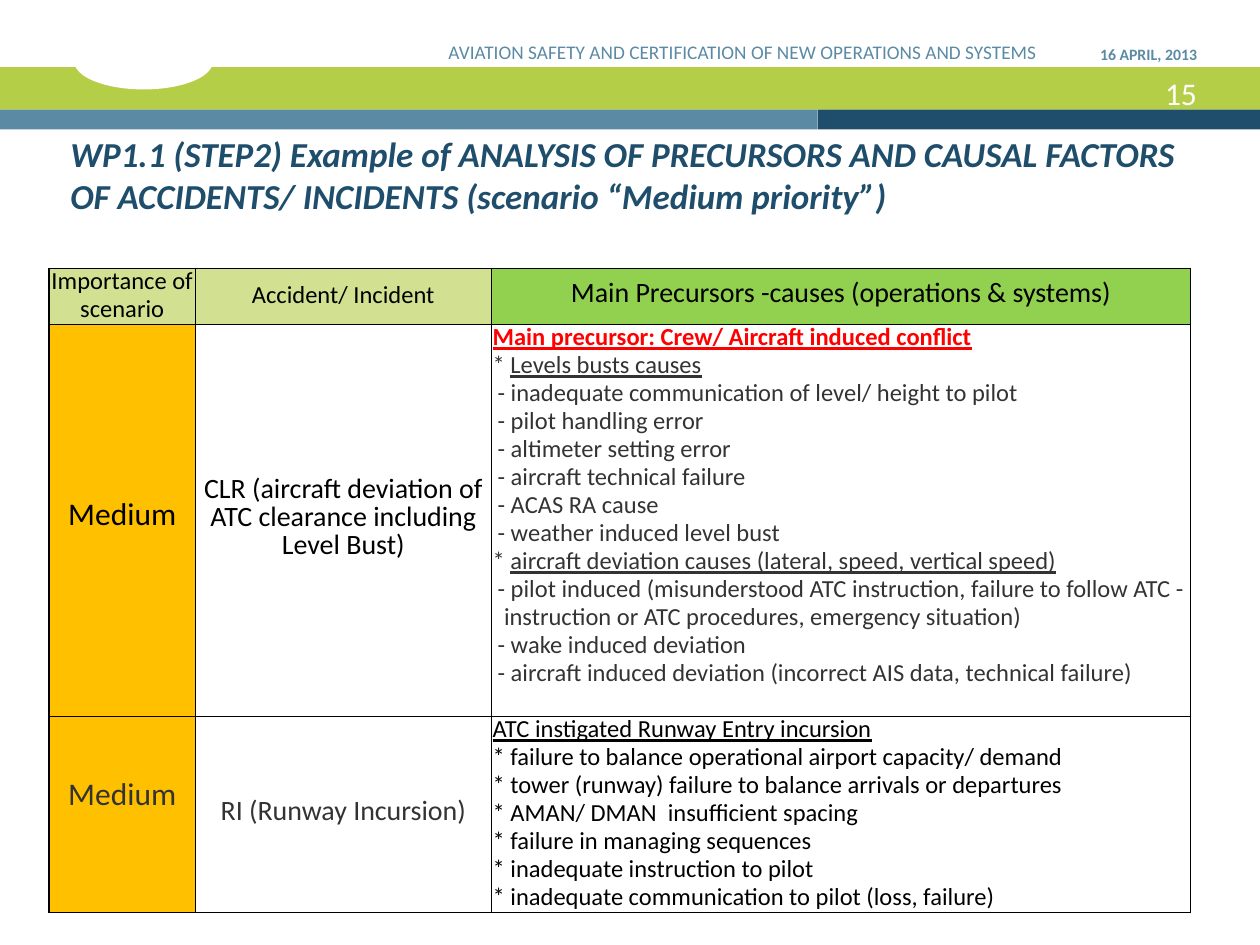
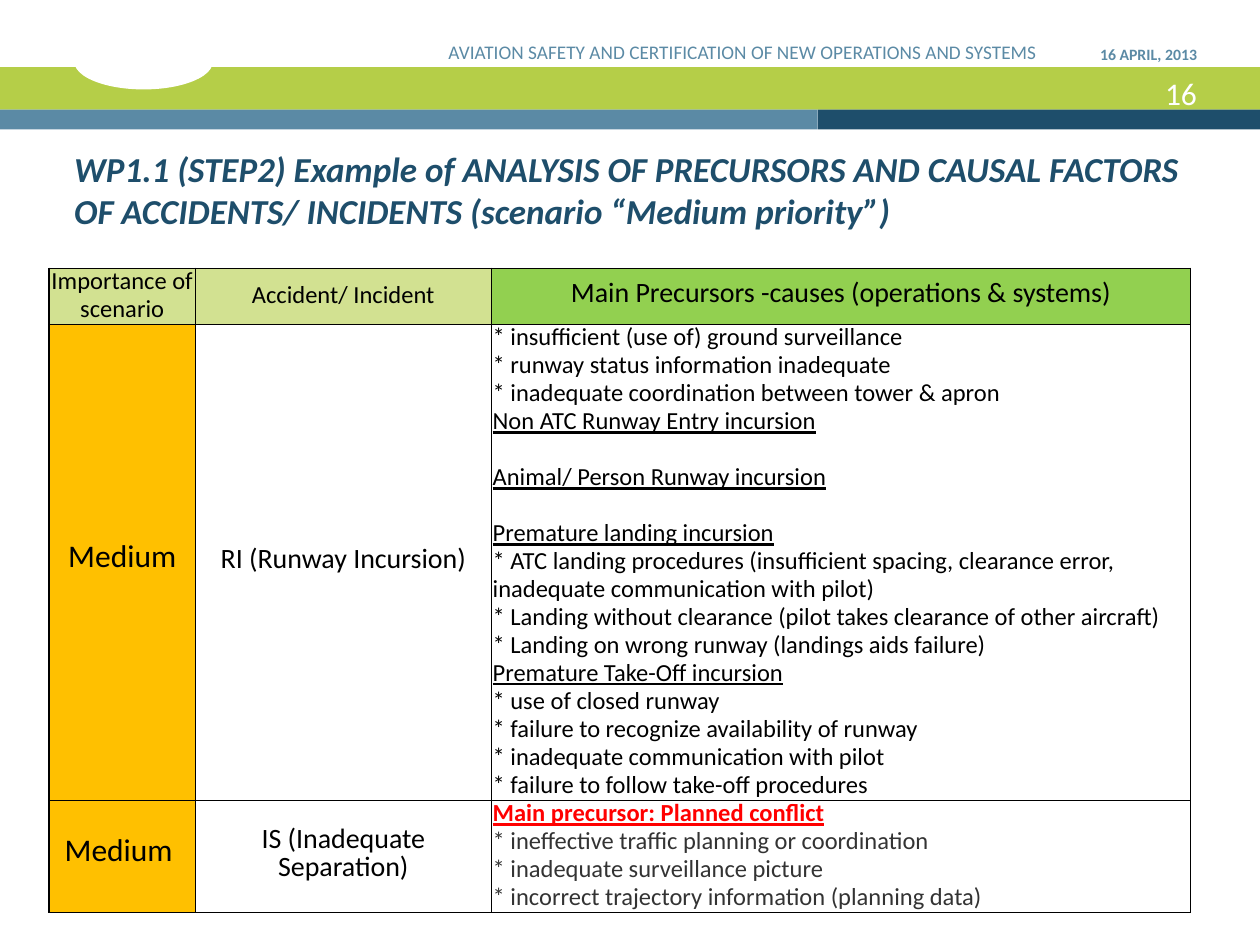
import dataclasses

import pptx
import pptx.dml.color
import pptx.enum.shapes
import pptx.enum.text
import pptx.oxml
import pptx.oxml.ns
import pptx.util

Pt = pptx.util.Pt
Inches = pptx.util.Inches
Align = pptx.enum.text.PP_ALIGN
Anchor = pptx.enum.text.MSO_ANCHOR
Shape = pptx.enum.shapes.MSO_SHAPE


@dataclasses.dataclass(frozen=True)
class Theme:
    font: str = "Calibri"
    navy: str = "1E4E6B"
    steel: str = "5B8AA5"
    lime: str = "B5CE48"
    pale: str = "D2E191"
    green: str = "92D050"
    amber: str = "FFC000"
    white: str = "FFFFFF"
    black: str = "000000"
    gray: str = "333333"
    red: str = "FF0000"
    title: int = 20
    large: int = 18
    medium: int = 16
    body: int = 14
    event: int = 11
    date: int = 9
    line: int = 16


LOOK = Theme()
WIDTH, HEIGHT = Inches(10), Inches(7.5)
COLUMNS = (11.6, 23.5, 55.5)
EVENT = "AVIATION SAFETY AND CERTIFICATION OF NEW OPERATIONS AND SYSTEMS"
TITLE = ("WP1.1 (STEP2) Example of ANALYSIS OF PRECURSORS AND CAUSAL FACTORS "
         "OF ACCIDENTS/ INCIDENTS (scenario “Medium priority”)")
HEADS = (("Importance of scenario", LOOK.body, LOOK.pale),
         ("Accident/ Incident", LOOK.body, LOOK.pale),
         ("Main Precursors -causes (operations & systems)", LOOK.medium, LOOK.green))


@dataclasses.dataclass
class Case:
    """One table row; lines is its height in text lines."""
    level: str
    event: str
    causes: list
    lines: int
    ink: str
    tint: str = LOOK.black
    lift: int = 0


# Causes are (kind, text): main, head, gap (head after a gap), sub, star, dash.
DEVIATION = [
    ("main", "Main precursor: Crew/ Aircraft induced conflict"),
    ("sub", "Levels busts causes"),
    ("dash", "inadequate communication of level/ height to pilot"),
    ("dash", "pilot handling error"),
    ("dash", "altimeter setting error"),
    ("dash", "aircraft technical failure"),
    ("dash", "ACAS RA cause"),
    ("dash", "weather induced level bust"),
    ("sub", "aircraft deviation causes (lateral, speed, vertical speed)"),
    ("dash", "pilot induced (misunderstood ATC instruction, failure to follow "
             "ATC - instruction or ATC procedures, emergency situation)"),
    ("dash", "wake induced deviation"),
    ("dash", "aircraft induced deviation (incorrect AIS data, technical failure)"),
]
ENTRY = [
    ("head", "ATC instigated Runway Entry incursion"),
    ("star", "failure to balance operational airport capacity/ demand"),
    ("star", "tower (runway) failure to balance arrivals or departures"),
    ("star", "AMAN/ DMAN  insufficient spacing"),
    ("star", "failure in managing sequences"),
    ("star", "inadequate instruction to pilot"),
    ("star", "inadequate communication to pilot (loss, failure)"),
]
RUNWAY = [
    ("star", "insufficient (use of) ground surveillance"),
    ("star", "runway status information inadequate"),
    ("star", "inadequate coordination between tower & apron"),
    ("head", "Non ATC Runway Entry incursion"),
    ("gap", "Animal/ Person Runway incursion"),
    ("gap", "Premature landing incursion"),
    ("star", "ATC landing procedures (insufficient spacing, clearance error, "
             "inadequate communication with pilot)"),
    ("star", "Landing without clearance (pilot takes clearance of other aircraft)"),
    ("star", "Landing on wrong runway (landings aids failure)"),
    ("head", "Premature Take-Off incursion"),
    ("star", "use of closed runway"),
    ("star", "failure to recognize availability of runway"),
    ("star", "inadequate communication with pilot"),
    ("star", "failure to follow take-off procedures"),
]
PLANNED = [
    ("main", "Main precursor: Planned conflict"),
    ("star", "ineffective traffic planning or coordination"),
    ("star", "inadequate surveillance picture"),
    ("star", "incorrect trajectory information (planning data)"),
]

# Each slide: number, title area, cases.
SLIDES = [
    (15, (4.6, 12.27, 93.2, 11.33), [
        Case("Medium", "CLR (aircraft deviation of ATC clearance including Level Bust)",
             DEVIATION, 14, LOOK.gray),
        Case("Medium", "RI (Runway Incursion)", ENTRY, 7, LOOK.black,
             tint=LOOK.gray, lift=1)]),
    (16, (4.9, 9.6, 90, 15.6), [
        Case("Medium", "RI (Runway Incursion)", RUNWAY, 17, LOOK.black),
        Case("Medium ", "IS (Inadequate Separation)", PLANNED, 4, LOOK.gray)]),
]


def area(left, top, width, height):
    """Turn percentages of the slide into lengths."""
    return (int(WIDTH * left / 100), int(HEIGHT * top / 100),
            int(WIDTH * width / 100), int(HEIGHT * height / 100))


def rgb(code):
    return pptx.dml.color.RGBColor.from_string(code)


def style(run, size, color, bold=False, slant=False, under=False):
    font = run.font
    font.name, font.size = LOOK.font, Pt(size)
    font.bold, font.italic, font.underline = bold, slant, under
    font.color.rgb = rgb(color)


def block(slide, kind, place, color):
    shape = slide.shapes.add_shape(kind, *area(*place))
    shape.shadow.inherit = False
    shape.fill.solid()
    shape.fill.fore_color.rgb = rgb(color)
    shape.line.fill.background()


def label(slide, place, text, size, color, align=Align.RIGHT, inset=0, **marks):
    frame = slide.shapes.add_textbox(*area(*place)).text_frame
    frame.word_wrap = True
    frame.vertical_anchor = Anchor.BOTTOM
    frame.margin_right = Inches(inset)
    frame.text = text
    line = frame.paragraphs[0]
    line.alignment = align
    style(line.runs[0], size, color, **marks)


def banner(slide, number):
    """Draw the bands, the date, the event and the slide number."""
    block(slide, Shape.RECTANGLE, (0, 7.1, 100, 4.5), LOOK.lime)
    block(slide, Shape.RECTANGLE, (64.9, 11.6, 35.1, 2.1), LOOK.navy)
    block(slide, Shape.RECTANGLE, (0, 11.6, 64.9, 2.1), LOOK.steel)
    block(slide, Shape.OVAL, (5.9, 3.6, 11, 5.87), LOOK.white)
    label(slide, (86.7, 7.2, 8.3, 5.33), str(number), LOOK.large, LOOK.white)
    label(slide, (83.1, 0.67, 11.9, 6.67), "16 APRIL, 2013", LOOK.date,
          LOOK.steel, bold=True)
    label(slide, (29.5, 0.67, 52.8, 6.67), EVENT, LOOK.event, LOOK.steel)


def frame(cell, fill=None):
    """Set a cell's fill, insets and black borders."""
    cell.margin_left = cell.margin_right = Inches(0.01)
    cell.margin_top = cell.margin_bottom = 0
    if fill:
        cell.fill.solid()
        cell.fill.fore_color.rgb = rgb(fill)
    else:
        cell.fill.background()
    props = cell._tc.get_or_add_tcPr()
    space = pptx.oxml.ns.nsdecls("a")
    for spot, side in enumerate("LRTB"):
        props.insert(spot, pptx.oxml.parse_xml(
            f'<a:ln{side} {space} w="{Pt(1)}"><a:solidFill>'
            f'<a:srgbClr val="{LOOK.black}"/></a:solidFill></a:ln{side}>'))


def center(cell, text, size, fill=None, color=LOOK.black):
    frame(cell, fill)
    cell.vertical_anchor = Anchor.MIDDLE
    cell.text_frame.text = text
    line = cell.text_frame.paragraphs[0]
    line.alignment = Align.CENTER
    line.line_spacing = Pt(LOOK.line)
    style(line.runs[0], size, color)


def cause(line, kind, text, ink):
    line.line_spacing = Pt(LOOK.line)
    if kind == "gap":
        line.space_before = Pt(LOOK.line)
    if kind == "dash":
        props = line._p.get_or_add_pPr()
        props.set("marL", str(Inches(0.09)))
        props.set("indent", str(-Inches(0.05)))
    mark = {"sub": "* ", "star": "* ", "dash": "- "}.get(kind, "")
    under = kind not in ("star", "dash")
    parts = [(mark, False), (text, under)] if kind == "sub" else [(mark + text, under)]
    main = kind == "main"
    for words, ruled in parts:
        run = line.add_run()
        run.text = words
        style(run, LOOK.body, LOOK.red if main else ink, bold=main, under=ruled)


def listing(cell, causes, ink):
    frame(cell)
    text = cell.text_frame
    for spot, (kind, words) in enumerate(causes):
        line = text.add_paragraph() if spot else text.paragraphs[0]
        cause(line, kind, words, ink)


def grid(slide, cases):
    lines = [2] + [case.lines for case in cases]
    place = area(3.9, 28.4, sum(COLUMNS), 0)[:3]
    table = slide.shapes.add_table(len(lines), len(COLUMNS), *place,
                                   Pt(LOOK.line * sum(lines))).table
    table.first_row = table.horz_banding = False
    for column, share in zip(table.columns, COLUMNS):
        column.width = int(WIDTH * share / 100)
    for row, count in zip(table.rows, lines):
        row.height = Pt(LOOK.line * count)
    for spot, (text, size, fill) in enumerate(HEADS):
        center(table.cell(0, spot), text, size, fill)
    for row, case in enumerate(cases, 1):
        level = table.cell(row, 0)
        center(level, case.level, LOOK.large, LOOK.amber, case.tint)
        level.margin_bottom = Pt(LOOK.line * case.lift)
        center(table.cell(row, 1), case.event, LOOK.medium, color=case.tint)
        listing(table.cell(row, 2), case.causes, case.ink)


def main():
    deck = pptx.Presentation()
    deck.slide_width, deck.slide_height = WIDTH, HEIGHT
    for number, place, cases in SLIDES:
        slide = deck.slides.add_slide(deck.slide_layouts[6])
        banner(slide, number)
        label(slide, place, TITLE, LOOK.title, LOOK.navy, align=Align.LEFT,
              inset=0.1, bold=True, slant=True)
        grid(slide, cases)
    deck.save("out.pptx")


if __name__ == "__main__":
    main()
